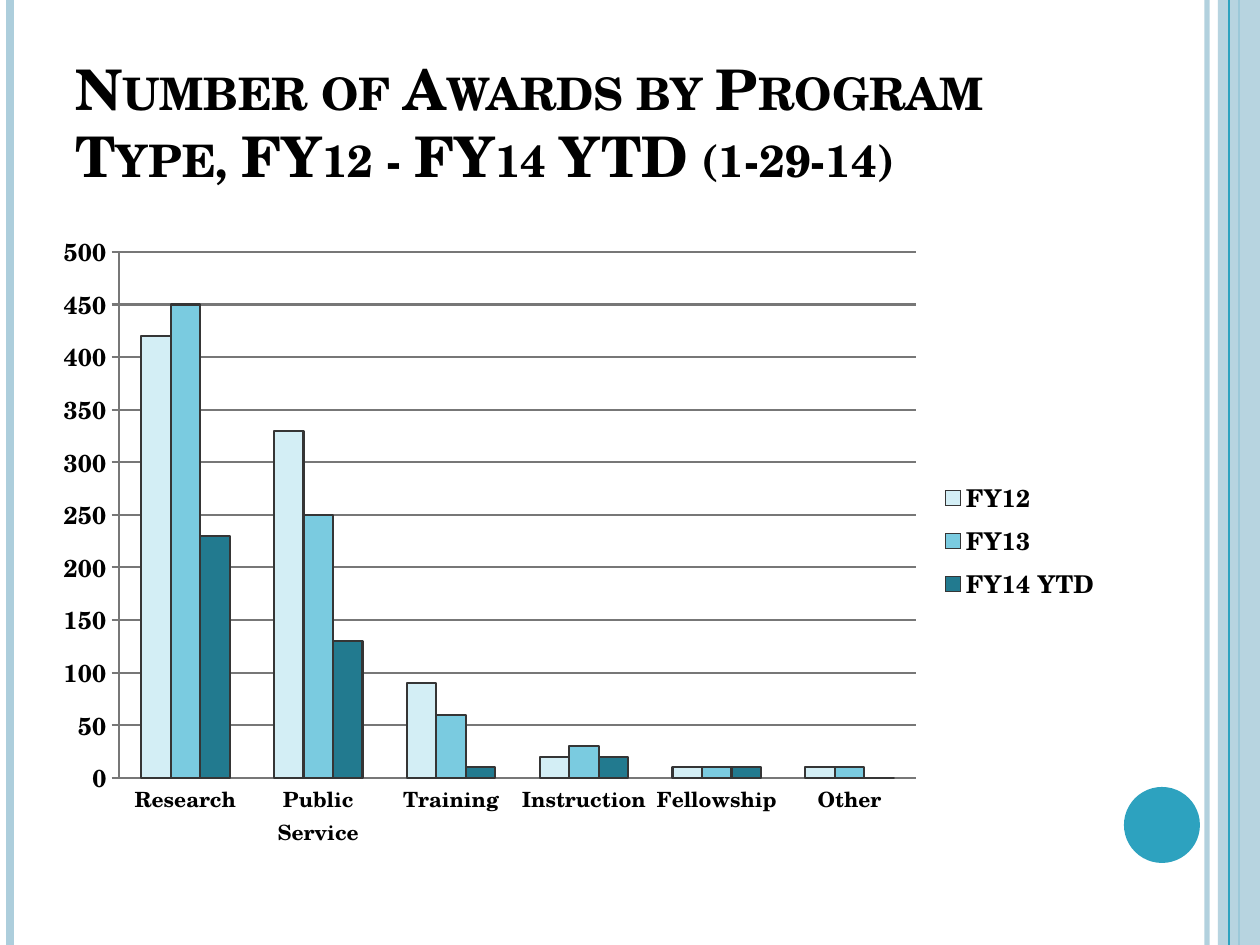
from dataclasses import dataclass

from lxml import etree
from pptx import Presentation, util as u
from pptx.chart.data import CategoryChartData
from pptx.dml.color import RGBColor
from pptx.enum import chart as ch, shapes, text
from pptx.oxml.ns import qn

SCALE = 914400 / 126
WIDE, HIGH = 1260, 945


@dataclass(frozen=True)
class Theme:
    font: str = "TeX Gyre Schola"
    ink: str = "000000"
    pale: str = "ADCEDC"
    teal: str = "2DA2BF"
    grid: str = "777777"
    edge: str = "353535"
    title: int = 32
    label: int = 14
    cat: int = 12
    hair: float = 1.25


@dataclass(frozen=True)
class Rule:
    x: int
    color: str
    width: float
    alpha: int = 100


@dataclass(frozen=True)
class Block:
    kind: shapes.MSO_SHAPE
    box: tuple[int, int, int, int]
    color: str
    alpha: int = 100


@dataclass(frozen=True)
class Year:
    name: str
    color: str
    counts: tuple[int, ...]


THEME = Theme()
TITLE = "Number of Awards by Program Type, FY12 - FY14 YTD (1-29-14)"
DECOR = (
    Rule(1207, THEME.pale, 3, 93),
    Rule(10, THEME.pale, 4.5),
    Rule(1239, THEME.teal, 1.5),
    Block(shapes.MSO_SHAPE.RECTANGLE, (1218, 0, 42, HIGH), THEME.pale, 87),
    Rule(1229, THEME.teal, 0.75),
    Block(shapes.MSO_SHAPE.OVAL, (1124, 787, 76, 76), THEME.teal),
)
GROUPS = ("Research", "Public Service", "Training", "Instruction", "Fellowship", "Other")
YEARS = (
    Year("FY12", "D3EEF5", (420, 330, 90, 20, 10, 10)),
    Year("FY13", "7ACBE0", (450, 250, 60, 30, 10, 10)),
    Year("FY14 YTD", "227A8F", (230, 130, 10, 20, 10, 0)),
)
CHART = (42, 221, 1071, 640)
PLOT = (119, 252, 797, 526)


def px(n: int) -> u.Emu:
    return u.Emu(round(n * SCALE))


def rgb(color: str) -> RGBColor:
    return RGBColor.from_string(color)


def fade(shape, alpha: int) -> None:
    """Set the opacity, in percent, of the shape's only colour."""
    if alpha < 100:
        tone = next(shape._element.spPr.iter(qn("a:srgbClr")))
        etree.SubElement(tone, qn("a:alpha"), val=str(alpha * 1000))


def stroke(line, color: str, width: float) -> None:
    line.color.rgb = rgb(color)
    line.width = u.Pt(width)


def style(font, size: int) -> None:
    font.name, font.size, font.bold = THEME.font, u.Pt(size), True
    font.color.rgb = rgb(THEME.ink)


def draw_rule(slide, rule: Rule) -> None:
    line = slide.shapes.add_connector(
        shapes.MSO_CONNECTOR.STRAIGHT, px(rule.x), 0, px(rule.x), px(HIGH))
    stroke(line.line, rule.color, rule.width)
    fade(line, rule.alpha)
    etree.SubElement(line._element.spPr, qn("a:effectLst"))


def draw_block(slide, block: Block) -> None:
    shape = slide.shapes.add_shape(block.kind, *map(px, block.box))
    shape.shadow.inherit = False
    shape.fill.solid()
    shape.fill.fore_color.rgb = rgb(block.color)
    shape.line.fill.background()
    fade(shape, block.alpha)


def draw_title(slide) -> None:
    frame = slide.shapes.add_textbox(*map(px, (63, 37, 1029, 158))).text_frame
    frame.word_wrap = True
    frame.vertical_anchor = text.MSO_ANCHOR.BOTTOM
    run = frame.paragraphs[0].add_run()
    run.text = TITLE
    style(run.font, THEME.title)
    run._r.get_or_add_rPr().set("cap", "small")


def place_plot(chart) -> None:
    """Pin the inner plot area to PLOT, as fractions of CHART."""
    left, top, wide, high = CHART
    x, y, w, h = PLOT
    parts = {"x": (x - left) / wide, "y": (y - top) / high, "w": w / wide, "h": h / high}
    area = chart._chartSpace.chart.plotArea
    for old in area.findall(qn("c:layout")):
        area.remove(old)
    layout = etree.Element(qn("c:layout"))
    area.insert(0, layout)
    manual = etree.SubElement(layout, qn("c:manualLayout"))
    etree.SubElement(manual, qn("c:layoutTarget"), val="inner")
    for key in "xy":
        etree.SubElement(manual, qn(f"c:{key}Mode"), val="edge")
    for key, part in parts.items():
        etree.SubElement(manual, qn(f"c:{key}"), val=f"{part:.4f}")


def draw_chart(slide) -> None:
    data = CategoryChartData()
    data.categories = GROUPS
    for year in YEARS:
        data.add_series(year.name, year.counts)
    chart = slide.shapes.add_chart(
        ch.XL_CHART_TYPE.COLUMN_CLUSTERED, *map(px, CHART), data).chart
    chart.has_title = False
    style(chart.font, THEME.label)

    plot = chart.plots[0]
    plot.gap_width, plot.overlap, plot.vary_by_categories = 150, 0, False
    for bars, year in zip(plot.series, YEARS):
        bars.format.fill.solid()
        bars.format.fill.fore_color.rgb = rgb(year.color)
        stroke(bars.format.line, THEME.edge, THEME.hair)

    cats, vals = chart.category_axis, chart.value_axis
    cats.major_tick_mark = ch.XL_TICK_MARK.NONE
    vals.major_tick_mark = ch.XL_TICK_MARK.OUTSIDE
    vals.minimum_scale, vals.maximum_scale, vals.major_unit = 0, 500, 50
    vals.has_major_gridlines = True
    for axis, size in ((cats, THEME.cat), (vals, THEME.label)):
        style(axis.tick_labels.font, size)
        stroke(axis.format.line, THEME.grid, THEME.hair)
    stroke(vals.major_gridlines.format.line, THEME.grid, THEME.hair)

    chart.has_legend = True
    chart.legend.position = ch.XL_LEGEND_POSITION.RIGHT
    chart.legend.include_in_layout = False
    style(chart.legend.font, THEME.label)
    place_plot(chart)


def main() -> None:
    deck = Presentation()
    deck.slide_width, deck.slide_height = px(WIDE), px(HIGH)
    slide = deck.slides.add_slide(deck.slide_layouts[6])
    for part in DECOR:
        if isinstance(part, Rule):
            draw_rule(slide, part)
        else:
            draw_block(slide, part)
    draw_title(slide)
    draw_chart(slide)
    deck.save("out.pptx")


if __name__ == "__main__":
    main()
